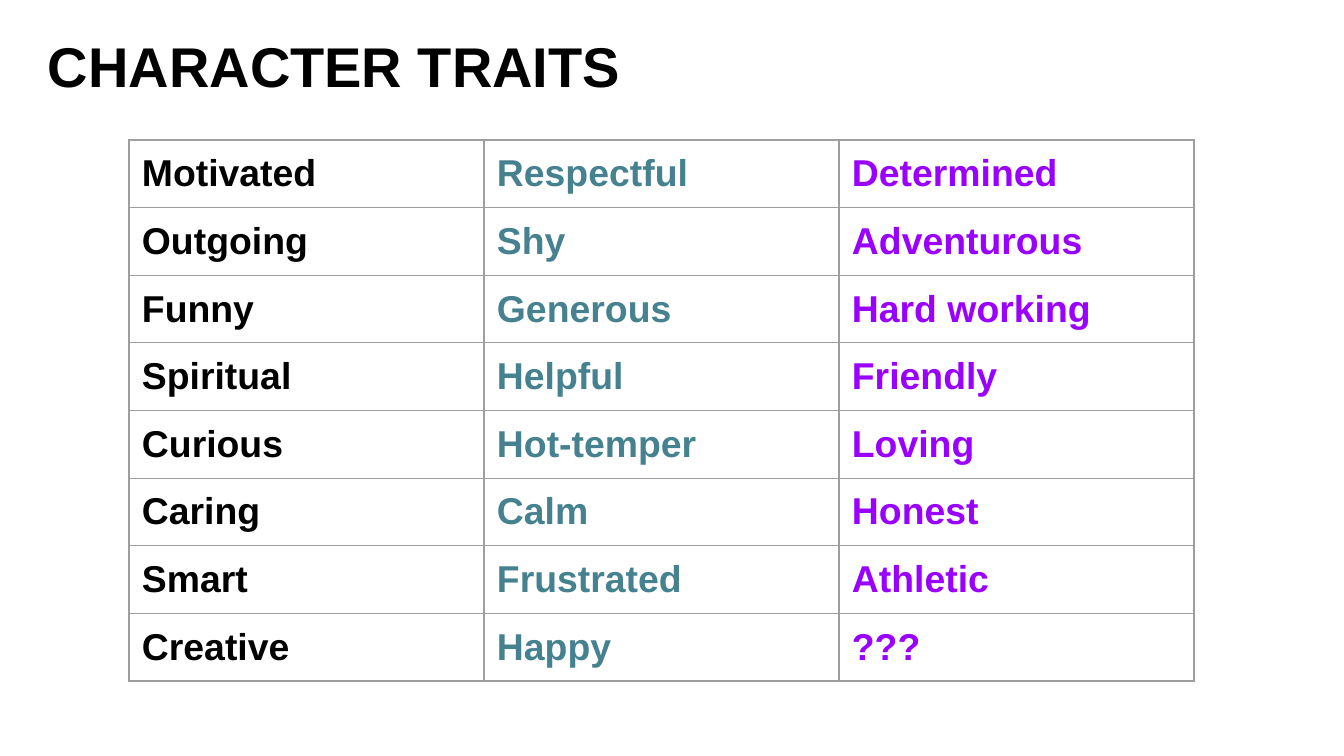
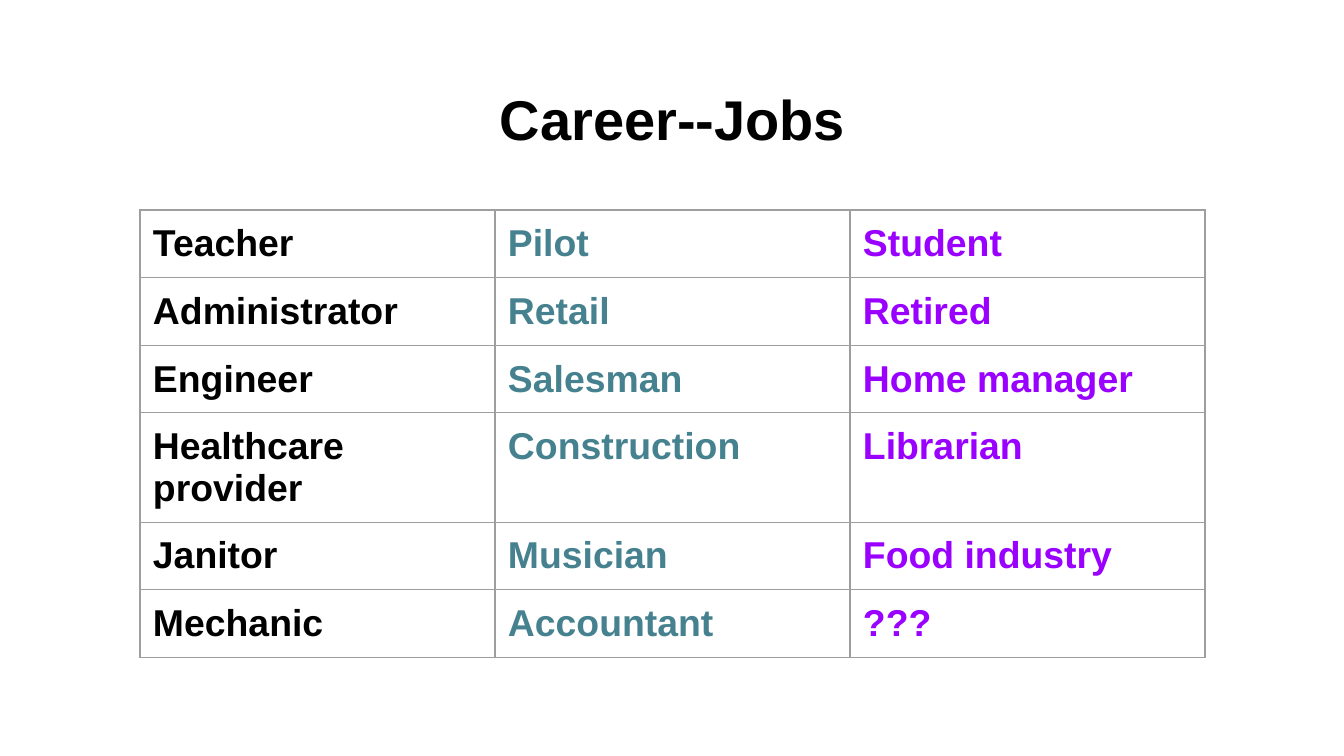
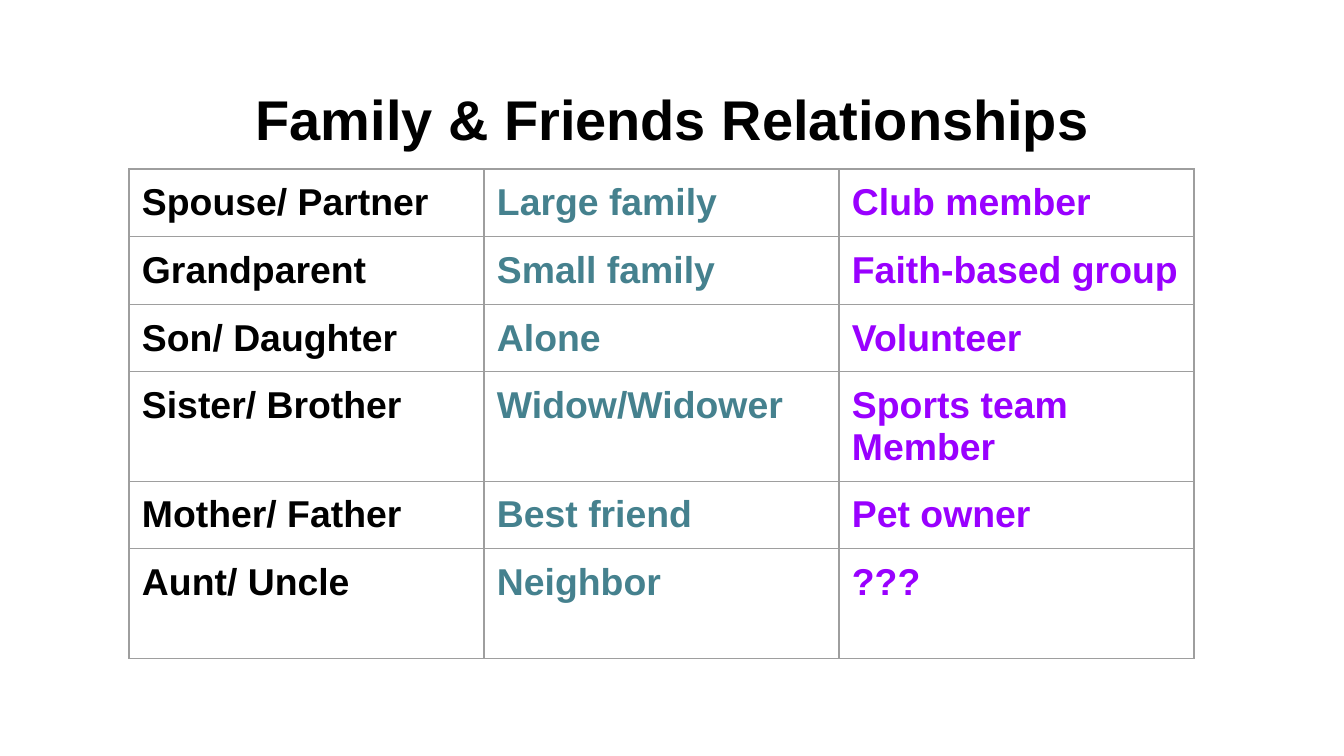
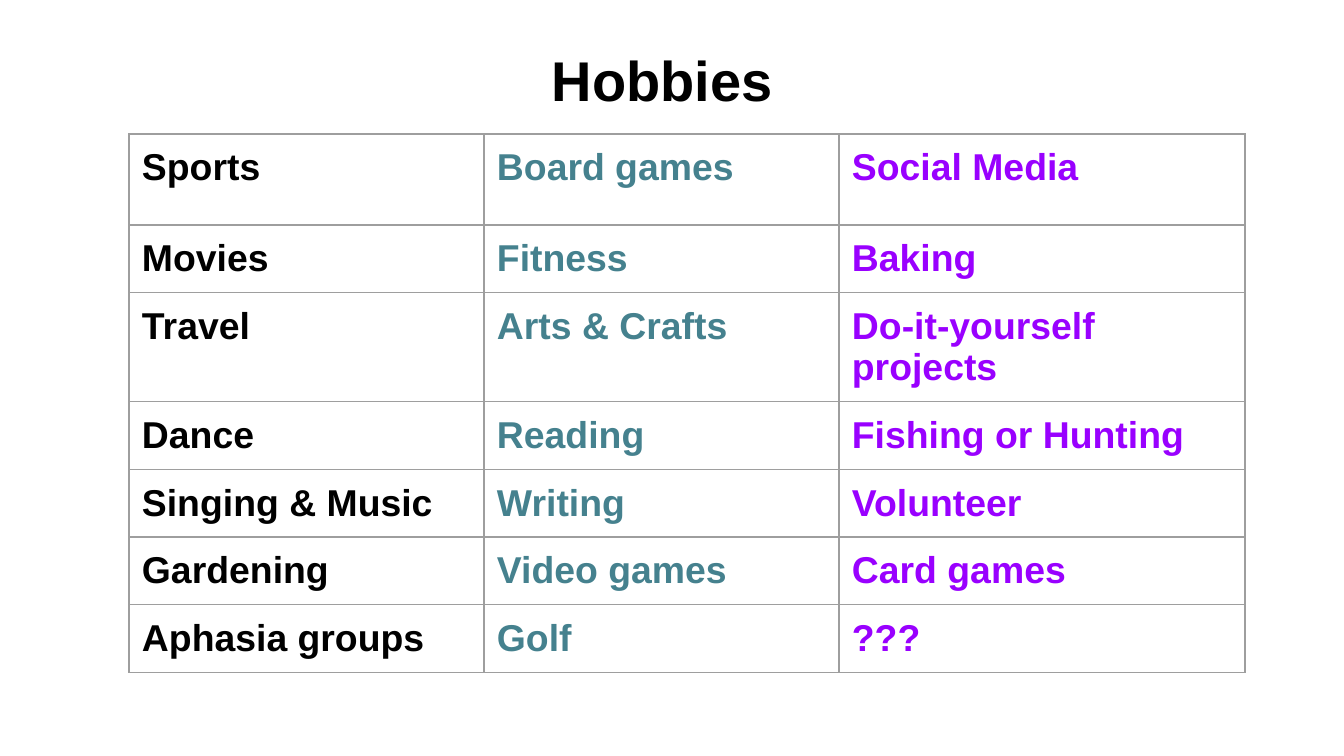
from lxml import etree
from pptx import Presentation
from pptx.dml.color import RGBColor
from pptx.enum.text import MSO_ANCHOR, MSO_AUTO_SIZE, PP_ALIGN
from pptx.oxml.ns import qn
from pptx.util import Emu, Pt

LEFT, CENTER = PP_ALIGN.LEFT, PP_ALIGN.CENTER
TOP = MSO_ANCHOR.TOP
NO_FIT = MSO_AUTO_SIZE.NONE
TITLE_ONLY = 5

SCALE = 914400 / 134.4
BLACK, TEAL, VIOLET, GREY = "000000", "45818E", "9900FF", "9E9E9E"
INKS = (BLACK, TEAL, VIOLET)
FONT = "Arial"
INSET = 13
TITLE_W, TITLE_H = 1253, 85
COL, LAST_COL = 355, 407
ROW = 56

TRAITS = [
    ("Motivated", "Respectful", "Determined"),
    ("Outgoing", "Shy", "Adventurous"),
    ("Funny", "Generous", "Hard working"),
    ("Spiritual", "Helpful", "Friendly"),
    ("Curious", "Hot-temper", "Loving"),
    ("Caring", "Calm", "Honest"),
    ("Smart", "Frustrated", "Athletic"),
    ("Creative", "Happy", "???"),
]
JOBS = [
    ("Teacher", "Pilot", "Student"),
    ("Administrator", "Retail", "Retired"),
    ("Engineer", "Salesman", "Home manager"),
    ("Healthcare provider", "Construction", "Librarian"),
    ("Janitor", "Musician", "Food industry"),
    ("Mechanic", "Accountant", "???"),
]
FAMILY = [
    ("Spouse/ Partner", "Large family", "Club member"),
    ("Grandparent", "Small family", "Faith-based group"),
    ("Son/ Daughter", "Alone", "Volunteer"),
    ("Sister/ Brother", "Widow/Widower", "Sports team Member"),
    ("Mother/ Father", "Best friend", "Pet owner"),
    ("Aunt/ Uncle", "Neighbor", "???"),
]
HOBBIES = [
    ("Sports", "Board games", "Social Media"),
    ("Movies", "Fitness", "Baking"),
    ("Travel", "Arts & Crafts", "Do-it-yourself projects"),
    ("Dance", "Reading", "Fishing or Hunting"),
    ("Singing & Music", "Writing", "Volunteer"),
    ("Gardening", "Video games", "Card games"),
    ("Aphasia groups", "Golf", "???"),
]


def px(n):
    return Emu(round(n * SCALE))


def ink(code):
    return RGBColor.from_string(code)


def put(obj, **values):
    for name, value in values.items():
        setattr(obj, name, value)


def write(frame, text, size, color, align=LEFT):
    par = frame.paragraphs[0]
    par.alignment = align
    run = par.add_run()
    run.text = text
    put(run.font, name=FONT, size=Pt(size), bold=True)
    run.font.color.rgb = ink(color)


def head(slide, text, left, top, align):
    title = slide.shapes.title
    put(title, left=px(left), top=px(top),
        width=px(TITLE_W), height=px(TITLE_H))
    frame = title.text_frame
    put(frame, word_wrap=True, auto_size=NO_FIT, vertical_anchor=TOP,
        margin_left=px(INSET), margin_right=px(INSET),
        margin_top=px(INSET + 6), margin_bottom=px(INSET))
    write(frame, text, 30, BLACK, align)


def edge(cell):
    """Draw a thin grey line on all four sides of a cell."""
    props = cell._tc.get_or_add_tcPr()
    for side in ("lnL", "lnR", "lnT", "lnB"):
        line = etree.SubElement(props, qn("a:" + side), w=str(Pt(0.75)))
        fill = etree.SubElement(line, qn("a:solidFill"))
        etree.SubElement(fill, qn("a:srgbClr"), val=GREY)


def grid(slide, rows, left, top, height, cols, tall):
    """Place a word table; tall maps a row index to its own height."""
    shape = slide.shapes.add_table(len(rows), len(cols), px(left), px(top),
                                   px(sum(cols)), px(height))
    table = shape.table
    put(table, first_row=False, horz_banding=False)
    for col, width in zip(table.columns, cols):
        col.width = px(width)
    for i, words in enumerate(rows):
        table.rows[i].height = px(tall.get(i, ROW))
        for j, word in enumerate(words):
            cell = table.cell(i, j)
            put(cell, vertical_anchor=TOP,
                **{"margin_" + side: px(INSET)
                   for side in ("left", "right", "top", "bottom")})
            edge(cell)
            cell.fill.background()
            write(cell.text_frame, word, 20, INKS[j])
    shape.height = px(height)


def page(deck, text, spot, rows, box, align=CENTER, last=COL, tall=None):
    slide = deck.slides.add_slide(deck.slide_layouts[TITLE_ONLY])
    head(slide, text, *spot, align)
    grid(slide, rows, *box, (COL, COL, last), tall or {})


def main():
    deck = Presentation()
    put(deck, slide_width=px(1344), slide_height=px(756))
    page(deck, "CHARACTER TRAITS", (35, 13), TRAITS, (129, 140, 574), LEFT)
    page(deck, "Career--Jobs", (46, 66), JOBS, (140, 210, 474))
    page(deck, "Family & Friends Relationships", (46, 66), FAMILY,
         (129, 169, 520), tall={5: 110})
    page(deck, "Hobbies", (36, 27), HOBBIES, (129, 134, 566),
         last=LAST_COL - 1, tall={0: 91})
    deck.save("out.pptx")


if __name__ == "__main__":
    main()
